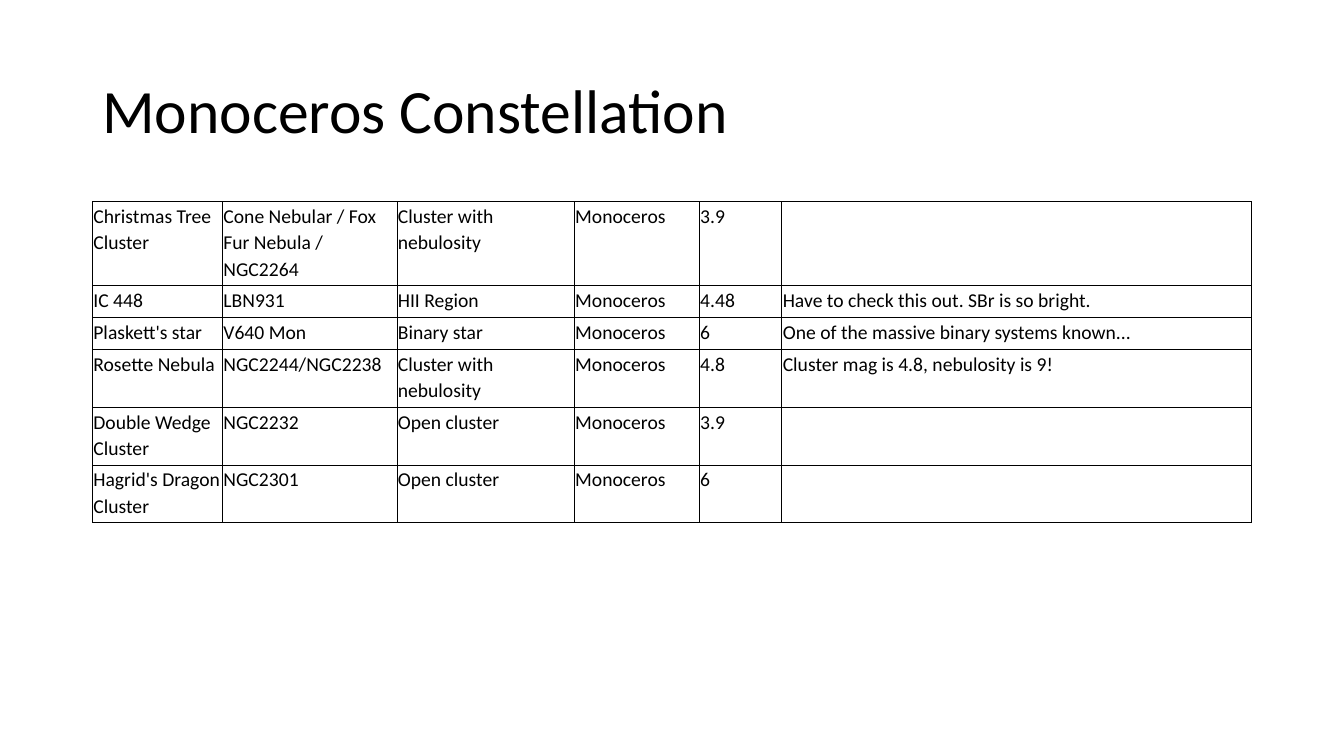
import pptx
import pptx.dml.color
import pptx.enum.text
import pptx.oxml
import pptx.oxml.ns
import pptx.util

Pt = pptx.util.Pt

TITLE = "Monoceros Constellation"
OBJECTS = [
    ("Christmas Tree Cluster", "Cone Nebular / Fox Fur Nebula / NGC2264",
     "Cluster with nebulosity", "Monoceros", "3.9", ""),
    ("IC 448", "LBN931", "HII Region", "Monoceros", "4.48",
     "Have to check this out. SBr is so bright."),
    ("Plaskett's star", "V640 Mon", "Binary star", "Monoceros", "6",
     "One of the massive binary systems known..."),
    ("Rosette Nebula", "NGC2244/NGC2238", "Cluster with nebulosity",
     "Monoceros", "4.8", "Cluster mag is 4.8, nebulosity is 9!"),
    ("Double Wedge Cluster", "NGC2232", "Open cluster", "Monoceros", "3.9", ""),
    ("Hagrid's Dragon Cluster", "NGC2301", "Open cluster", "Monoceros", "6", ""),
]

THEME = {"font": "Calibri", "ink": "000000", "title": 44, "body": 14, "rule": 0.5}
PAGE_SIZE = (960, 540)
LEFT, WIDTH = 66, 828
TITLE_TOP, TITLE_HEIGHT = 28.75, 104.4
TABLE_TOP = 144
COLUMN_WIDTHS = (92.9, 124.6, 126.7, 89.3, 59, 335.5)
FIRST_ROW, OTHER_ROW = 44.6, 15.1
CELL_FORMAT = {"margin_left": Pt(0.72), "margin_right": Pt(0.72),
               "margin_top": Pt(0.72), "margin_bottom": Pt(3.6)}


def apply_format(target, values):
    for name, value in values.items():
        setattr(target, name, value)


def write(frame, text, size, spacing):
    para = frame.paragraphs[0]
    para.line_spacing = spacing
    span = para.add_run()
    span.text = text
    apply_format(span.font, {"name": THEME["font"], "size": Pt(size)})
    span.font.color.rgb = pptx.dml.color.RGBColor.from_string(THEME["ink"])


def add_borders(cell):
    properties = cell._tc.get_or_add_tcPr()
    for side in ("lnL", "lnR", "lnT", "lnB"):
        properties.append(pptx.oxml.parse_xml(
            f'<a:{side} {pptx.oxml.ns.nsdecls("a")} w="{Pt(THEME["rule"])}">'
            f'<a:solidFill><a:srgbClr val="{THEME["ink"]}"/></a:solidFill>'
            f'</a:{side}>'))


def add_title(page):
    box = page.shapes.add_textbox(Pt(LEFT), Pt(TITLE_TOP), Pt(WIDTH), Pt(TITLE_HEIGHT))
    apply_format(box.text_frame, {
        "word_wrap": True,
        "vertical_anchor": pptx.enum.text.MSO_ANCHOR.MIDDLE})
    write(box.text_frame, TITLE, THEME["title"], 0.9)


def add_object_table(page):
    heights = [FIRST_ROW] + [OTHER_ROW] * (len(OBJECTS) - 1)
    table = page.shapes.add_table(
        len(OBJECTS), len(COLUMN_WIDTHS), Pt(LEFT), Pt(TABLE_TOP),
        Pt(WIDTH), Pt(sum(heights))).table
    apply_format(table, {"first_row": False, "horz_banding": False})
    for column, width in zip(table.columns, COLUMN_WIDTHS):
        column.width = Pt(width)
    for row, height, values in zip(table.rows, heights, OBJECTS):
        row.height = Pt(height)
        for cell, value in zip(row.cells, values):
            apply_format(cell, CELL_FORMAT)
            add_borders(cell)
            cell.fill.background()
            write(cell.text_frame, value, THEME["body"], 1.1)


def main():
    deck = pptx.Presentation()
    deck.slide_width, deck.slide_height = map(Pt, PAGE_SIZE)
    page = deck.slides.add_slide(deck.slide_layouts[6])
    add_title(page)
    add_object_table(page)
    deck.save("out.pptx")


if __name__ == "__main__":
    main()
